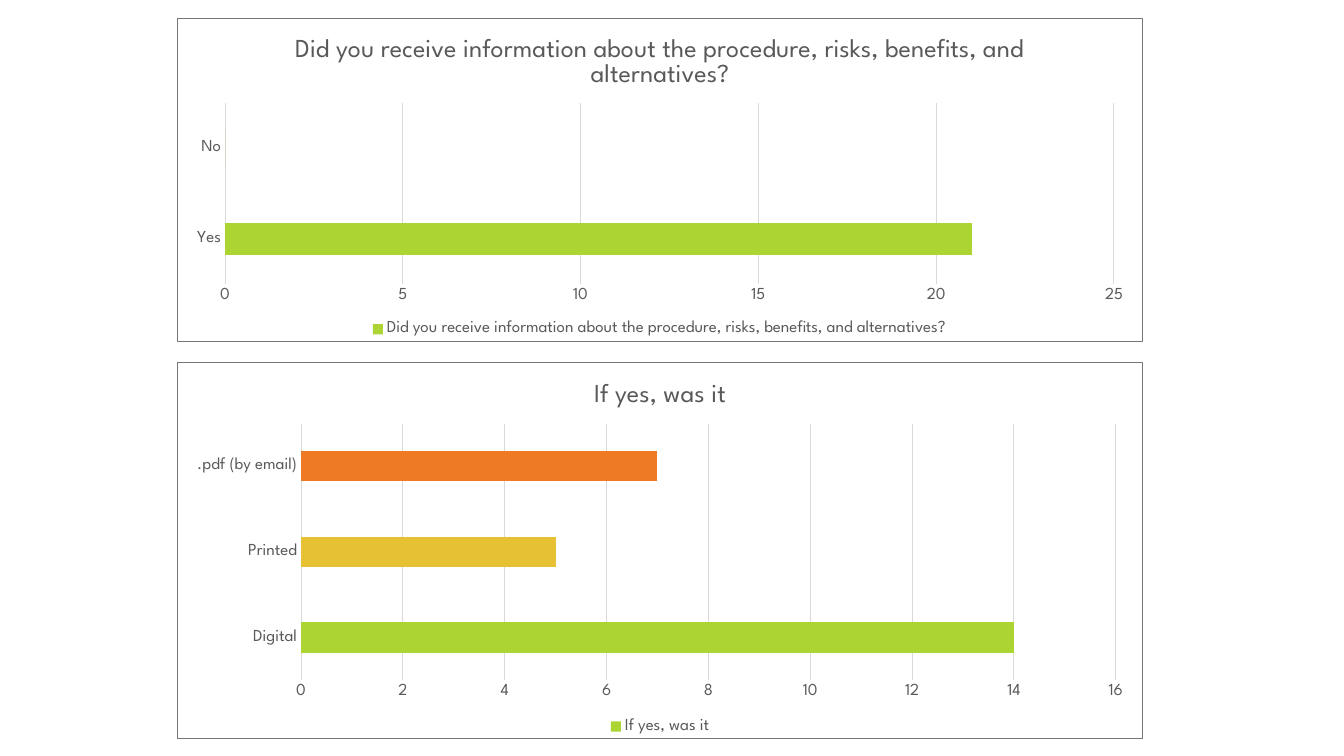
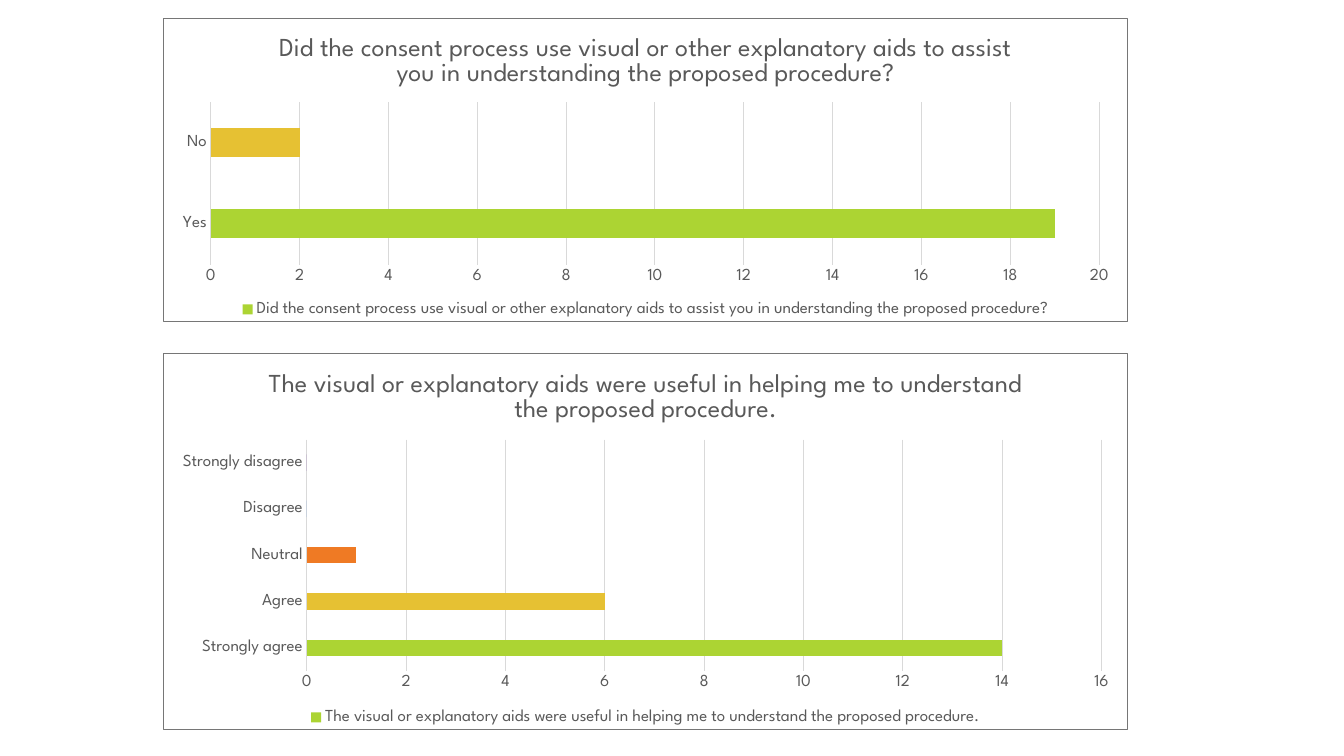
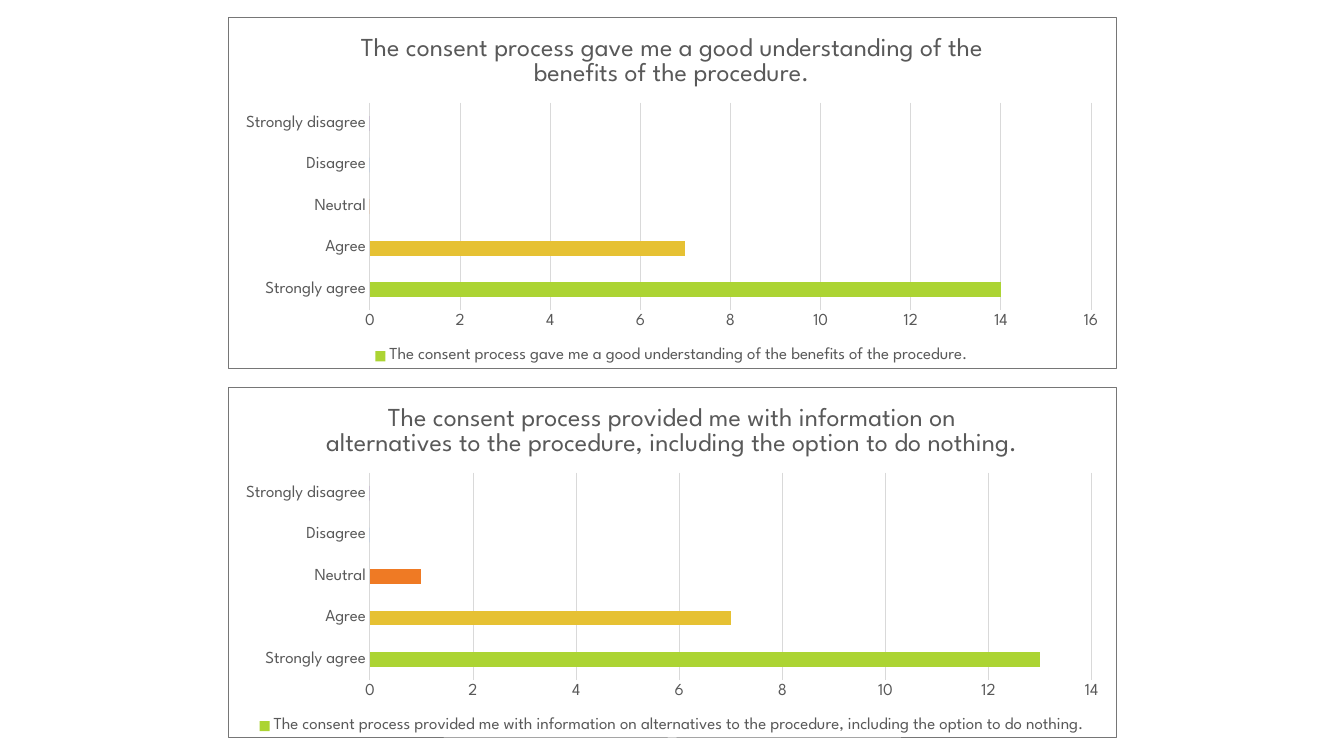
from dataclasses import dataclass

from lxml import etree
from pptx import Presentation
from pptx.chart.data import CategoryChartData
from pptx.dml.color import RGBColor
from pptx.enum.chart import XL_CHART_TYPE, XL_LEGEND_POSITION, XL_TICK_MARK
from pptx.oxml import parse_xml
from pptx.oxml.ns import nsdecls, qn
from pptx.util import Cm, Pt


@dataclass(frozen=True)
class Theme:
    font: str = "League Spartan"
    text: str = "595959"
    grid: str = "D9D9D9"
    border: str = "767676"
    bars: tuple = ("ACD433", "E6C133", "EF7A24", "5AA0F5", "7030A0")
    title_size: float = 18.6
    label_size: float = 12
    line_width: float = 0.75
    gap_width: int = 182


THEME = Theme()

# Content: each slide has a left edge and width, and its charts from top to bottom
YES_NO = ("Yes", "No")
FORMATS = ("Digital", "Printed", ".pdf (by email)")
AGREEMENT = ("Strongly agree", "Agree", "Neutral", "Disagree", "Strongly disagree")

SLIDES = [
    {"left": 4.47, "width": 24.33, "charts": [
        {"question": "Did you receive information about the procedure, risks, "
                     "benefits, and alternatives?",
         "top": 0.46, "height": 8.15, "answers": YES_NO, "counts": (21, 0)},
        {"question": "If yes, was it",
         "top": 9.12, "height": 9.5, "answers": FORMATS, "counts": (14, 5, 7)},
    ]},
    {"left": 4.11, "width": 24.33, "charts": [
        {"question": "Did the consent process use visual or other explanatory aids "
                     "to assist you in understanding the proposed procedure?",
         "top": 0.46, "height": 7.65, "answers": YES_NO, "counts": (19, 2)},
        {"question": "The visual or explanatory aids were useful in helping me "
                     "to understand the proposed procedure.",
         "top": 8.89, "height": 9.5, "answers": AGREEMENT, "counts": (14, 6, 1, 0, 0)},
    ]},
    {"left": 5.74, "width": 22.4, "charts": [
        {"question": "The consent process gave me a good understanding of the "
                     "benefits of the procedure.",
         "top": 0.43, "height": 8.86, "answers": AGREEMENT, "counts": (14, 7, 0, 0, 0)},
        {"question": "The consent process provided me with information on alternatives "
                     "to the procedure, including the option to do nothing.",
         "top": 9.75, "height": 8.86, "answers": AGREEMENT, "counts": (13, 7, 1, 0, 0)},
    ]},
]


# Formatting
def format_font(font, size=THEME.label_size, color=THEME.text):
    font.name = THEME.font
    font.size = Pt(size)
    font.bold = False
    font.color.rgb = RGBColor.from_string(color)


def write_text(text_frame, text, **font_format):
    text_frame.text = text
    format_font(text_frame.paragraphs[0].runs[0].font, **font_format)


def format_line(line, color):
    line.color.rgb = RGBColor.from_string(color)
    line.width = Pt(THEME.line_width)


def add_border(chart):
    """Outline the whole chart; its properties belong right after c:chart."""
    properties = parse_xml(f"<c:spPr {nsdecls('c', 'a')}/>")
    etree.SubElement(properties, qn("a:noFill"))
    line = etree.SubElement(properties, qn("a:ln"), w=str(Pt(THEME.line_width)))
    fill = etree.SubElement(line, qn("a:solidFill"))
    etree.SubElement(fill, qn("a:srgbClr"), val=THEME.border)
    chart.element.find(qn("c:chart")).addnext(properties)


def format_axes(chart):
    for axis in (chart.category_axis, chart.value_axis):
        axis.major_tick_mark = axis.minor_tick_mark = XL_TICK_MARK.NONE
        format_font(axis.tick_labels.font)
    format_line(chart.category_axis.format.line, THEME.grid)
    chart.value_axis.format.line.fill.background()
    chart.value_axis.has_major_gridlines = True
    format_line(chart.value_axis.major_gridlines.format.line, THEME.grid)


def color_bars(plot):
    plot.gap_width = THEME.gap_width
    plot.vary_by_categories = False
    series = plot.series[0]
    series.invert_if_negative = False
    fills = [series.format.fill]
    fills += [series.points[i].format.fill for i in range(1, len(plot.categories))]
    for fill, color in zip(fills, THEME.bars):
        fill.solid()
        fill.fore_color.rgb = RGBColor.from_string(color)


def add_question_chart(slide, left, width, question, top, height, answers, counts):
    data = CategoryChartData()
    data.categories = answers
    data.add_series(question, counts)
    chart = slide.shapes.add_chart(
        XL_CHART_TYPE.BAR_CLUSTERED,
        Cm(left), Cm(top), Cm(width), Cm(height), data).chart
    format_font(chart.font)
    add_border(chart)

    chart.has_title = True
    chart.chart_title.include_in_layout = False
    write_text(chart.chart_title.text_frame, question, size=THEME.title_size)

    chart.has_legend = True
    chart.legend.position = XL_LEGEND_POSITION.BOTTOM
    chart.legend.include_in_layout = False
    format_font(chart.legend.font)

    format_axes(chart)
    color_bars(chart.plots[0])


# Build the slides
def main():
    presentation = Presentation()
    presentation.slide_width = Cm(33.87)
    presentation.slide_height = Cm(19.05)
    blank_layout = presentation.slide_layouts[6]
    for content in SLIDES:
        slide = presentation.slides.add_slide(blank_layout)
        for chart in content["charts"]:
            add_question_chart(slide, content["left"], content["width"], **chart)
    presentation.save("out.pptx")


if __name__ == "__main__":
    main()
